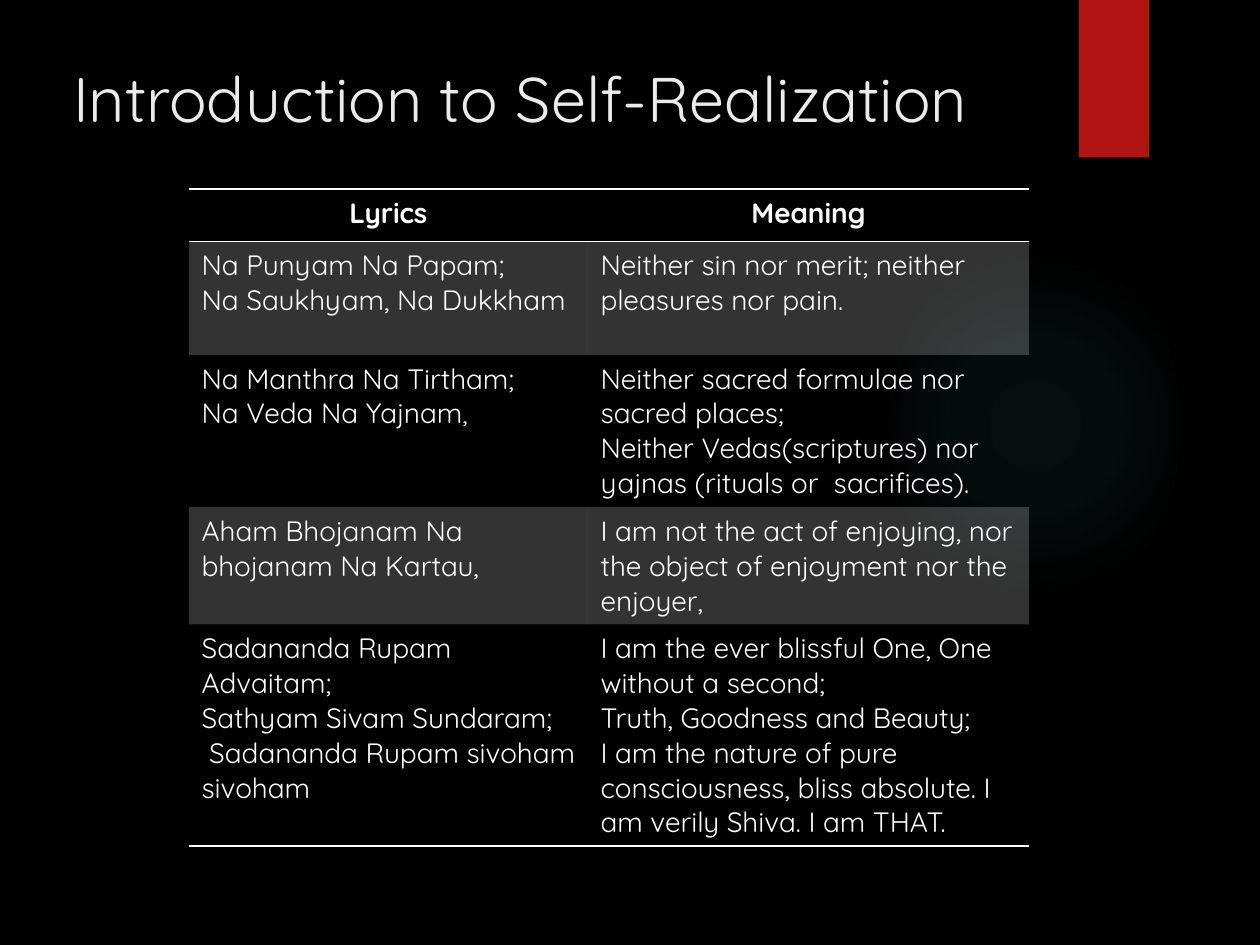
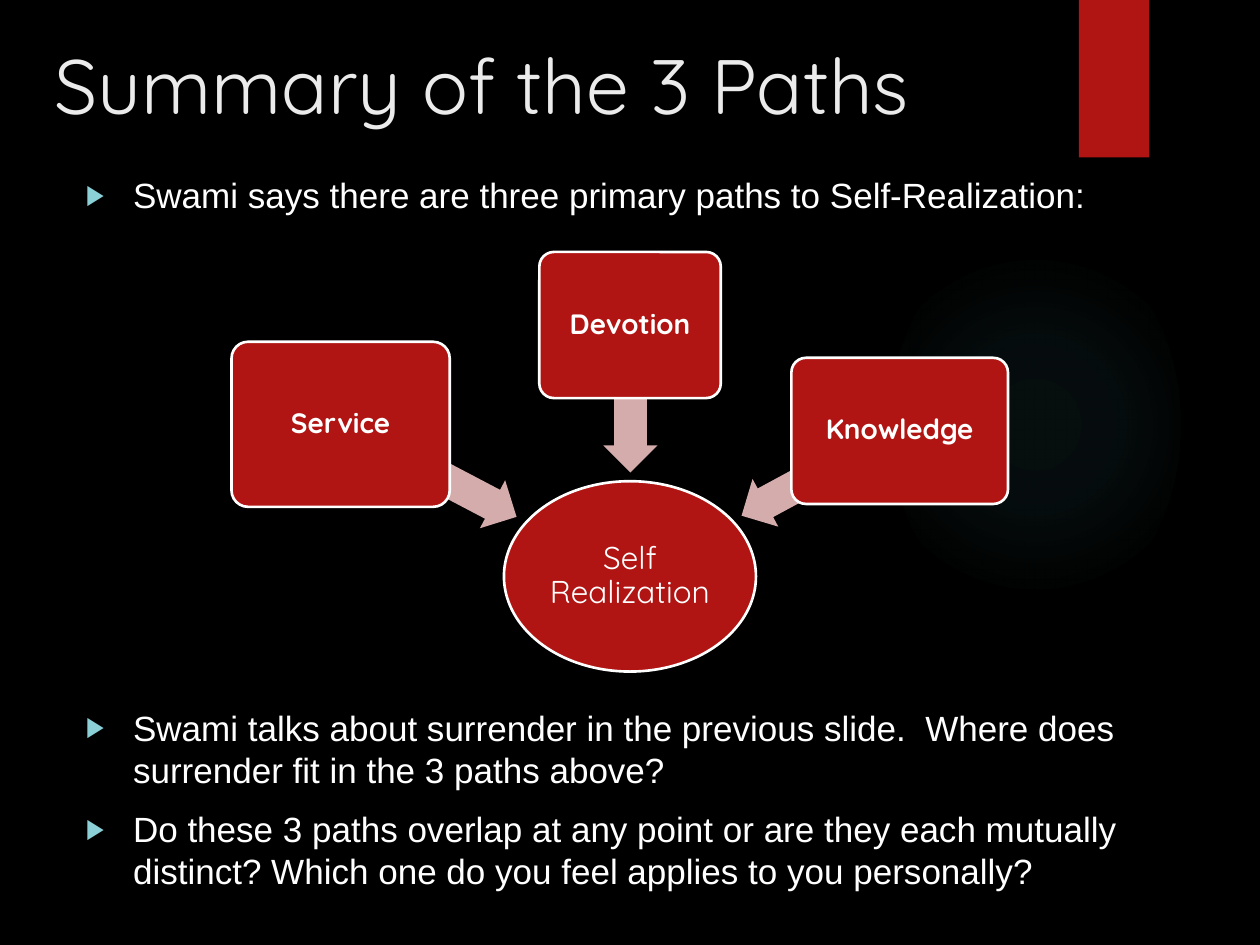
"""Build two slides on the paths to self-realization."""
from dataclasses import dataclass

from pptx import Presentation
from pptx.dml.color import RGBColor
from pptx.enum.shapes import MSO_SHAPE
from pptx.enum.text import MSO_ANCHOR, MSO_AUTO_SIZE, PP_ALIGN
from pptx.oxml import parse_xml
from pptx.oxml.ns import nsdecls, qn
from pptx.shapes.autoshape import Shape
from pptx.slide import Slide
from pptx.table import _Cell
from pptx.text.text import TextFrame, _Paragraph
from pptx.util import Pt

OVAL, RECT = MSO_SHAPE.OVAL, MSO_SHAPE.RECTANGLE
ROUND, ARROW = MSO_SHAPE.ROUNDED_RECTANGLE, MSO_SHAPE.LEFT_ARROW
LEFT, CENTER = PP_ALIGN.LEFT, PP_ALIGN.CENTER
TOP, MIDDLE = MSO_ANCHOR.TOP, MSO_ANCHOR.MIDDLE
FIXED = MSO_AUTO_SIZE.NONE

COLORS = {
    "back": "000000", "text": "FFFFFF", "title": "EBEBEB", "red": "B01513",
    "pink": "D4ACAB", "glow": "50B9C1", "mark": "8AD0D6",
}
HEAD_FONT, BODY_FONT = "Quicksand", "Arial"
PLAIN_GRID = "{2D5ABB26-0587-4C30-8999-92F81FD0307C}"


@dataclass(frozen=True)
class Box:
    """Hold a place and size in points."""
    left: float
    top: float
    width: float
    height: float


@dataclass(frozen=True)
class Way:
    """Hold one path with the arrow that leads to the goal."""
    label: str
    box: Box
    arrow: Box
    turn: float


@dataclass(frozen=True)
class Verse:
    """Hold one table row with its height in points."""
    height: float
    lyrics: list[str]
    meaning: list[str]


GLOW = Box(508.3, 131.8, 166.3, 221.8)
BAND = Box(616.5, 0, 40.2, 90)
GOAL = Box(288, 275, 144, 108.8)
WAYS = [
    Way("Service", Box(132.3, 195.3, 124.7, 94.3), Box(187.9, 253.4, 113.8, 31), 207.7),
    Way("Devotion", Box(308.2, 144, 103.7, 83.5), Box(318.2, 212.4, 84.2, 31), 270),
    Way("Knowledge", Box(452.2, 204.5, 123.8, 83.5), Box(417.6, 254.9, 102.2, 31), 331.6),
]
VERSES = [
    Verse(30, ["Lyrics"], ["Meaning"]),
    Verse(64.8, ["Na Punyam Na Papam;", "Na Saukhyam, Na Dukkham"],
          ["Neither sin nor merit; neither pleasures nor pain."]),
    Verse(84.2, ["Na Manthra Na Tirtham;", "Na Veda Na Yajnam,"],
          ["Neither sacred formulae nor sacred places;",
           "Neither Vedas(scriptures) nor yajnas (rituals or  sacrifices)."]),
    Verse(64.8, ["Aham Bhojanam Na bhojanam Na Kartau,"],
          ["I am not the act of enjoying, nor the object of enjoyment nor the enjoyer,"]),
    Verse(122.4, ["Sadananda Rupam", "Advaitam;", "Sathyam Sivam Sundaram;",
                  " Sadananda Rupam sivoham sivoham"],
          ["I am the ever blissful One, One without a second;",
           "Truth, Goodness and Beauty;",
           "I am the nature of pure consciousness, bliss absolute. "
           "I am verily Shiva. I am THAT."]),
]
POINTS = [
    "Swami says there are three primary paths to Self-Realization:",
    "Swami talks about surrender in the previous slide.  "
    "Where does surrender fit in the 3 paths above?",
    "Do these 3 paths overlap at any point or are they each mutually distinct? "
    "Which one do you feel applies to you personally?",
]
GAPS = [0, 280, 10]


def tint(name: str) -> RGBColor:
    """Return a named colour."""
    return RGBColor.from_string(COLORS[name])


def spots(box: Box) -> tuple[Pt, Pt, Pt, Pt]:
    """Return the four lengths of a box."""
    return Pt(box.left), Pt(box.top), Pt(box.width), Pt(box.height)


def place(shape: Shape, box: Box) -> None:
    """Move a placeholder to a box."""
    shape.left, shape.top, shape.width, shape.height = spots(box)


def bullet(para: _Paragraph) -> None:
    """Give a paragraph a hanging triangle bullet."""
    props = para._p.get_or_add_pPr()
    props.set("marL", str(Pt(27)))
    props.set("indent", str(Pt(-27)))
    for part in (
        f'<a:buClr {nsdecls("a")}><a:srgbClr val="{COLORS["mark"]}"/></a:buClr>',
        f'<a:buSzPct {nsdecls("a")} val="80000"/>',
        f'<a:buFont {nsdecls("a")} typeface="{BODY_FONT}"/>',
        f'<a:buChar {nsdecls("a")} char="▶"/>',
    ):
        props.append(parse_xml(part))


def write(frame: TextFrame, texts: list[str], *, size: float = 16, color: str = "text",
          font: str = HEAD_FONT, bold: bool = False, align: PP_ALIGN = LEFT,
          line: float = 1, gaps: list[float] | None = None, marks: bool = False) -> None:
    """Write paragraphs in one format."""
    for num, text in enumerate(texts):
        para = frame.add_paragraph() if num else frame.paragraphs[0]
        if marks:
            bullet(para)
        para.alignment, para.line_spacing = align, line
        para.space_before = Pt(gaps[num] if gaps else 0)
        run = para.add_run()
        run.text = text
        run.font.size, run.font.name, run.font.bold = Pt(size), font, bold
        run.font.color.rgb = tint(color)


def fit(frame: TextFrame, *, anchor: MSO_ANCHOR = TOP, inset: float | None = None) -> None:
    """Set wrap, anchor and margins of a text frame."""
    frame.word_wrap, frame.auto_size, frame.vertical_anchor = True, FIXED, anchor
    if inset is not None:
        frame.margin_left = frame.margin_right = Pt(inset)
        frame.margin_top = frame.margin_bottom = Pt(inset)


def draw(slide: Slide, kind: MSO_SHAPE, box: Box, color: str, *, edge: bool = False,
         turn: float = 0, tweaks: tuple[float, ...] = ()) -> Shape:
    """Draw a filled preset shape."""
    shape = slide.shapes.add_shape(kind, *spots(box))
    shape.shadow.inherit = False
    shape.fill.solid()
    shape.fill.fore_color.rgb = tint(color)
    if edge:
        shape.line.color.rgb, shape.line.width = tint("text"), Pt(1.5)
    else:
        shape.line.fill.background()
    shape.rotation = turn
    for num, value in enumerate(tweaks):
        shape.adjustments[num] = value
    return shape


def shine(shape: Shape) -> None:
    """Swap a solid fill for a fading round glow."""
    stops = "".join(
        f'<a:gs pos="{spot * 1000}"><a:srgbClr val="{COLORS["glow"]}">'
        f'<a:alpha val="{alpha * 1000}"/></a:srgbClr></a:gs>'
        for spot, alpha in ((0, 7), (36, 6), (69, 0), (100, 0)))
    props = shape.element.spPr
    old = props.find(qn("a:solidFill"))
    props.replace(old, parse_xml(
        f'<a:gradFill {nsdecls("a")} rotWithShape="1"><a:gsLst>{stops}</a:gsLst>'
        '<a:path path="circle"><a:fillToRect l="50000" t="50000" r="50000" b="50000"/>'
        '</a:path></a:gradFill>'))


def start(deck: Presentation, layout: int, title: str, box: Box, size: float) -> Slide:
    """Add a slide with its glow, band and title."""
    slide = deck.slides.add_slide(deck.slide_layouts[layout])
    shine(draw(slide, OVAL, GLOW, "glow"))
    draw(slide, RECT, BAND, "red")
    for item in list(slide.placeholders):
        item.element.getparent().append(item.element)
    head = slide.shapes.title
    place(head, box)
    fit(head.text_frame)
    write(head.text_frame, [title], size=size, color="title")
    return slide


def paint(cell: _Cell, band: bool, sides: str) -> None:
    """Fill a cell and rule the given sides."""
    if band:
        cell.fill.solid()
        cell.fill.fore_color.rgb = tint("text")
        shade = cell._tc.tcPr.find(qn("a:solidFill"))[0]
        shade.append(parse_xml(f'<a:alpha {nsdecls("a")} val="20000"/>'))
    else:
        cell.fill.background()
    for num, side in enumerate(sides):
        cell._tc.tcPr.insert(num, parse_xml(
            f'<a:ln{side} {nsdecls("a")} w="{Pt(1)}"><a:solidFill>'
            f'<a:srgbClr val="{COLORS["text"]}"/></a:solidFill></a:ln{side}>'))


def chant(deck: Presentation) -> None:
    """Build the slide with lyrics and meaning."""
    slide = start(deck, 5, "Introduction to Self-Realization",
                  Box(34.6, 30.2, 555, 110), 36)
    total = sum(verse.height for verse in VERSES)
    frame = slide.shapes.add_table(len(VERSES), 2, *spots(Box(108, 108, 480, total)))
    grid = frame.table
    grid.first_row = grid.horz_banding = False
    next(frame.element.iter(qn("a:tableStyleId"))).text = PLAIN_GRID
    grid.columns[0].width, grid.columns[1].width = Pt(228), Pt(252)
    sides = {0: "TB", len(VERSES) - 1: "B"}
    for row, verse in enumerate(VERSES):
        grid.rows[row].height = Pt(verse.height)
        for col, texts in enumerate((verse.lyrics, verse.meaning)):
            cell = grid.cell(row, col)
            write(cell.text_frame, texts, bold=row == 0, align=LEFT if row else CENTER)
            paint(cell, row % 2 == 1, sides.get(row, ""))


def paths(deck: Presentation) -> None:
    """Build the slide with three paths to one goal."""
    slide = start(deck, 1, "Summary of the 3 Paths", Box(23.8, 18, 615.6, 110), 44)
    body = slide.placeholders[1]
    place(body, Box(41.8, 95.8, 666, 420))
    fit(body.text_frame)
    write(body.text_frame, POINTS, size=20, font=BODY_FONT, gaps=GAPS, marks=True)
    goal = draw(slide, OVAL, GOAL, "red", edge=True)
    fit(goal.text_frame, anchor=MIDDLE, inset=0.7)
    write(goal.text_frame, ["Self Realization"], size=18, align=CENTER, line=0.9)
    for way in WAYS:
        draw(slide, ARROW, way.arrow, "pink", turn=way.turn, tweaks=(0.6, 0.5))
        card = draw(slide, ROUND, way.box, "red", edge=True, tweaks=(0.1,))
        fit(card.text_frame, anchor=MIDDLE, inset=2.4)
        write(card.text_frame, [way.label], bold=True, align=CENTER, line=0.9)


def main() -> None:
    """Build and save the deck."""
    deck = Presentation()
    deck.slide_width, deck.slide_height = Pt(720), Pt(540)
    back = deck.slide_master.background.fill
    back.solid()
    back.fore_color.rgb = tint("back")
    chant(deck)
    paths(deck)
    deck.save("out.pptx")


if __name__ == "__main__":
    main()
